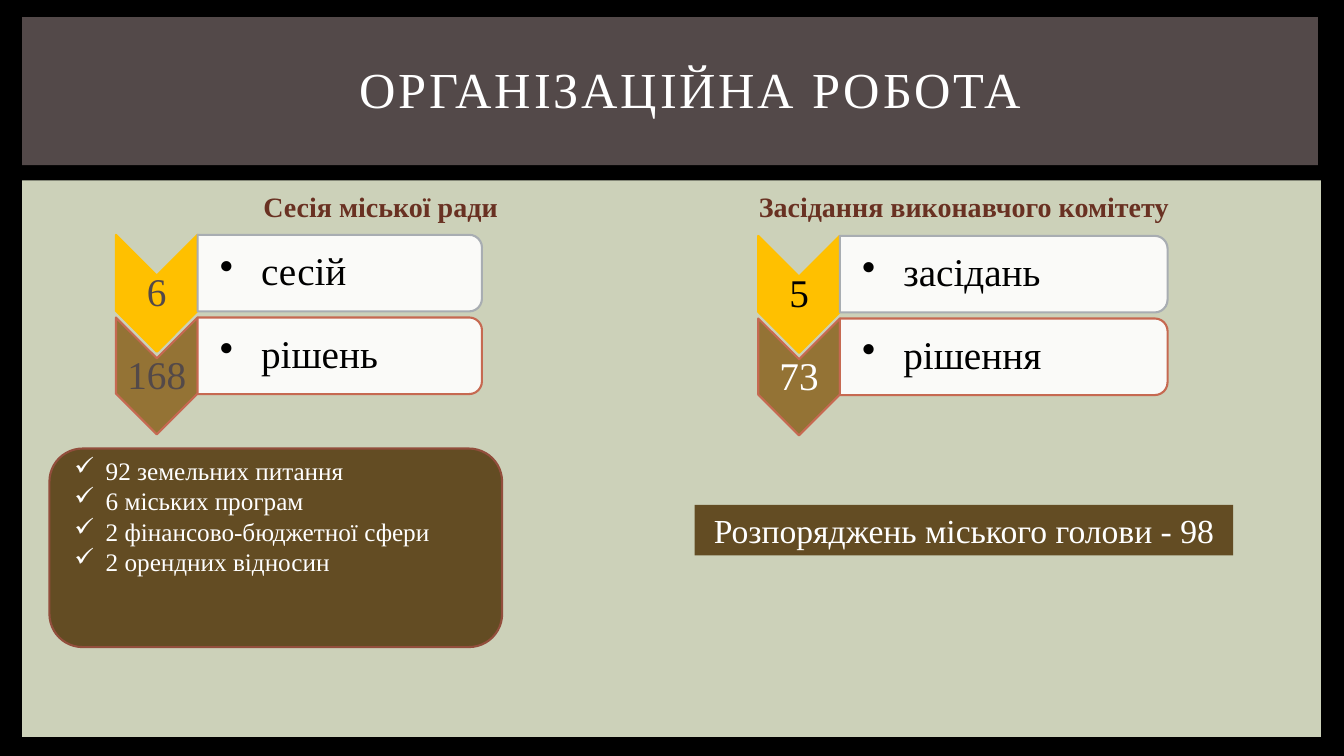
from lxml.etree import SubElement
from pptx import Presentation
from pptx.dml.color import RGBColor
from pptx.enum.shapes import MSO_SHAPE
from pptx.enum.text import MSO_ANCHOR, PP_ALIGN
from pptx.oxml.ns import qn
from pptx.util import Inches, Pt

FONT = "Times New Roman"
COLORS = {
    "frame": "000000", "sage": "CCD1B9", "slate": "534949", "white": "FFFFFF",
    "black": "000000", "maroon": "693122", "brown": "634C23", "rust": "924E3C",
    "gold": "FFC000", "bronze": "947335", "coral": "C66951", "gray": "A8ADB2",
}
# Arrow fill, arrow line and panel line for each row of an arrow list
ROW_STYLES = [("gold", "gold", "gray"), ("bronze", "coral", "coral")]
ROW_STEP, ARROW_WIDTH, ARROW_HEIGHT, PANEL_HEIGHT = 0.82, 0.81, 1.16, 0.76


def rgb(name):
    return RGBColor.from_string(COLORS[name])


def add_block(slide, box, fill, line=None, kind=MSO_SHAPE.RECTANGLE, opacity=None):
    block = slide.shapes.add_shape(kind, *map(Inches, box))
    block.shadow.inherit = False
    block.fill.solid()
    block.fill.fore_color.rgb = rgb(fill)
    if opacity is not None:
        color = block.fill._xPr.find(".//" + qn("a:srgbClr"))
        SubElement(color, qn("a:alpha"), val=str(opacity * 1000))
    if line:
        block.line.color.rgb = rgb(line)
        block.line.width = Pt(1.5)
    else:
        block.line.fill.background()
    return block


def add_turned(slide, box, *style, **options):
    """Place a shape turned by 90 degrees so that it covers the box."""
    left, top, width, height = box
    shift = (width - height) / 2
    block = add_block(slide, (left + shift, top - shift, height, width), *style, **options)
    block.rotation = 90


def write(slide, box, text, size=18, color="white", bold=False, align=PP_ALIGN.CENTER,
          anchor=MSO_ANCHOR.TOP, margins=(0.1, 0.05, 0.1, 0.05), line_spacing=1.0,
          tracking=None, bullet=None, indent=0.31, wrap=True):
    frame = slide.shapes.add_textbox(*map(Inches, box)).text_frame
    frame.word_wrap = wrap
    frame.vertical_anchor = anchor
    (frame.margin_left, frame.margin_top,
     frame.margin_right, frame.margin_bottom) = map(Inches, margins)
    frame.text = text
    for paragraph in frame.paragraphs:
        paragraph.alignment = align
        paragraph.line_spacing = line_spacing
        font = paragraph.runs[0].font
        font.name, font.size, font.bold = FONT, Pt(size), bold
        font.color.rgb = rgb(color)
        if tracking:
            font._element.set("spc", str(tracking * 100))
        if bullet:
            properties = paragraph._p.get_or_add_pPr()
            properties.set("marL", str(Inches(indent)))
            properties.set("indent", str(-Inches(indent)))
            SubElement(properties, qn("a:buChar"), char=bullet)


def add_header(slide, box, title):
    left, top, width, height = box
    add_block(slide, box, "slate")
    write(slide, (left + 0.44, top + 0.14, width - 0.47, height - 0.34), title,
          size=36, tracking=2, anchor=MSO_ANCHOR.MIDDLE)


def add_arrow_list(slide, left, top, panel_width, rows):
    panel_left = left + ARROW_WIDTH
    tight = {"size": 28, "anchor": MSO_ANCHOR.MIDDLE, "line_spacing": 0.9}
    for index, ((count, count_color, label), style) in enumerate(zip(rows, ROW_STYLES)):
        arrow_fill, arrow_line, panel_line = style
        row_top = top + index * ROW_STEP
        # Arrow with its count
        add_turned(slide, (left, row_top, ARROW_WIDTH, ARROW_HEIGHT),
                   arrow_fill, arrow_line, kind=MSO_SHAPE.CHEVRON)
        write(slide, (left, row_top + 0.41, ARROW_WIDTH, 0.35), count,
              color=count_color, margins=(0.02,) * 4, **tight)
        # Panel with its label
        add_turned(slide, (panel_left, row_top, panel_width, PANEL_HEIGHT), "white",
                   panel_line, kind=MSO_SHAPE.ROUND_2_SAME_RECTANGLE, opacity=90)
        write(slide, (panel_left, row_top + 0.04, panel_width - 0.04, 0.68), label,
              color="black", align=PP_ALIGN.LEFT, bullet="•", indent=0.41,
              margins=(0.22, 0.02, 0.02, 0.02), **tight)


def add_topics(slide, box, topics):
    left, top, width, height = box
    add_block(slide, box, "brown", "rust", kind=MSO_SHAPE.ROUNDED_RECTANGLE)
    write(slide, (left + 0.15, top + 0.02, width - 0.14, height - 0.05),
          "\n".join(topics), align=PP_ALIGN.LEFT, bullet="✓")


def add_orders(slide, box, text):
    add_block(slide, box, "brown")
    write(slide, box, text, size=24)


def build_slide(slide):
    slide.background.fill.solid()
    slide.background.fill.fore_color.rgb = rgb("frame")
    add_block(slide, (0.22, 1.79, 12.88, 5.52), "sage")
    add_header(slide, (0.22, 0.17, 12.85, 1.47), "ОРГАНІЗАЦІЙНА РОБОТА")

    # City council session
    heading = {"size": 20, "color": "maroon", "bold": True}
    write(slide, (2.25, 1.83, 3.05, 0.44), "Сесія міської ради", **heading)
    add_arrow_list(slide, 1.15, 2.33, 2.82,
                   [("6", "slate", "сесій"), ("168", "slate", "рішень")])
    add_topics(slide, (0.49, 4.45, 4.49, 1.97), [
        "92 земельних питання", "6 міських програм",
        "2 фінансово-бюджетної сфери", "2 орендних відносин"])

    # Executive committee
    write(slide, (7.41, 1.83, 4.3, 0.44), "Засідання виконавчого комітету",
          wrap=False, **heading)
    add_arrow_list(slide, 7.52, 2.34, 3.25,
                   [("5", "black", "засідань"), ("73", "white", "рішення")])
    add_orders(slide, (6.89, 5.01, 5.34, 0.5), "Розпоряджень міського голови - 98")


def main():
    deck = Presentation()
    deck.slide_width, deck.slide_height = Inches(13.33), Inches(7.5)
    build_slide(deck.slides.add_slide(deck.slide_layouts[6]))
    deck.save("out.pptx")


if __name__ == "__main__":
    main()
